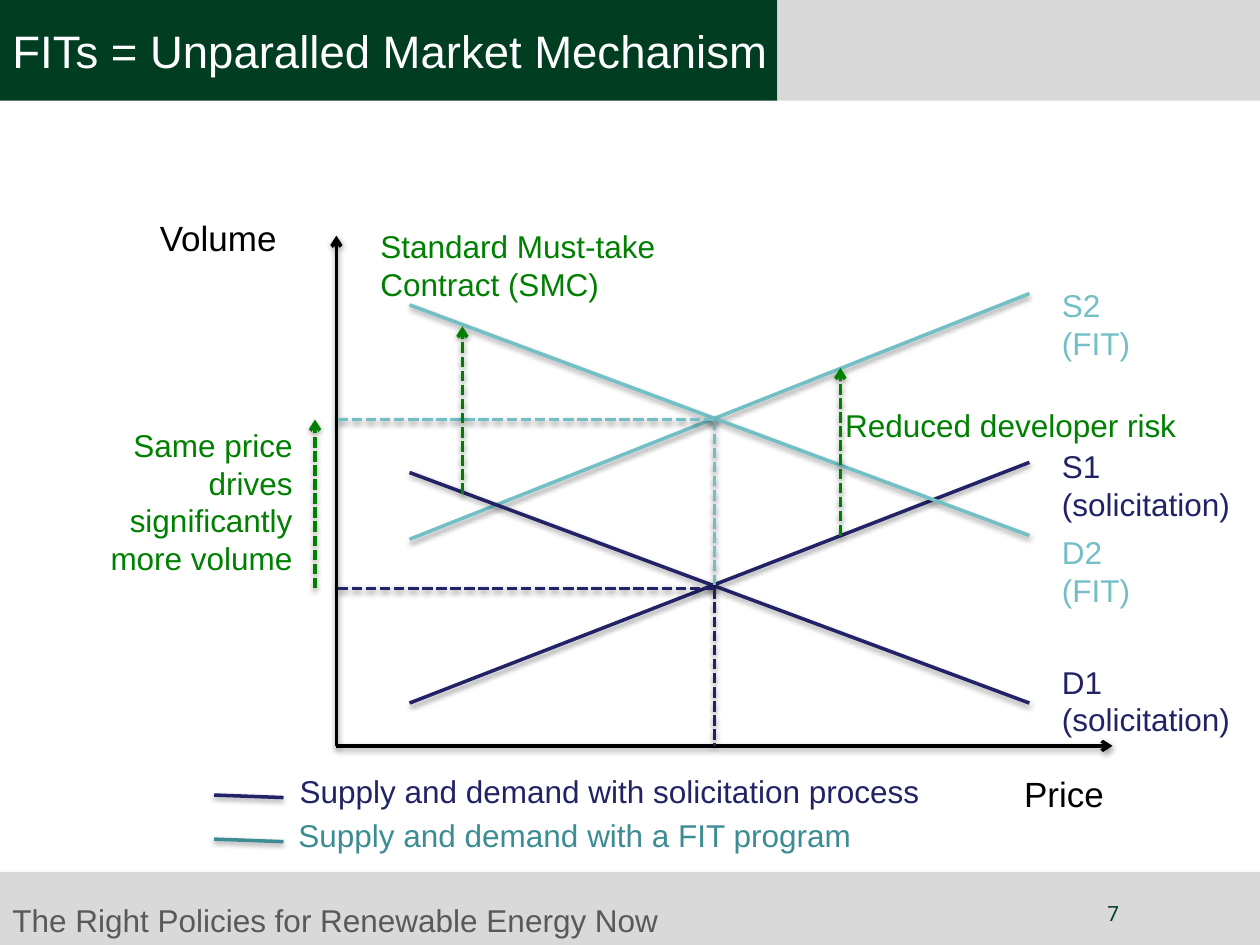
from lxml import etree
from pptx import Presentation
from pptx.dml.color import RGBColor
from pptx.enum.dml import MSO_LINE
from pptx.enum.shapes import MSO_CONNECTOR, MSO_SHAPE
from pptx.enum.text import PP_ALIGN
from pptx.oxml import parse_xml
from pptx.oxml.ns import nsdecls, qn
from pptx.util import Inches, Pt

RECT = MSO_SHAPE.RECTANGLE
STRAIGHT = MSO_CONNECTOR.STRAIGHT
DASH = MSO_LINE.SQUARE_DOT
LEFT, MID, RIGHT = PP_ALIGN.LEFT, PP_ALIGN.CENTER, PP_ALIGN.RIGHT

COLORS = {
    "black": "000000", "white": "FFFFFF", "gray": "D9D9D9",
    "slate": "595959", "forest": "013D21", "green": "008000",
    "navy": "222267", "aqua": "72BFC5", "teal": "3C8C93",
}
SHADOW = (
    f'<a:effectLst {nsdecls("a")}>'
    '<a:outerShdw blurRad="40000" dist="20000" dir="5400000" rotWithShape="0">'
    '<a:srgbClr val="000000"><a:alpha val="38000"/></a:srgbClr>'
    '</a:outerShdw></a:effectLst>'
)

# Axes and crossing points of the graph
AXIS_X, AXIS_Y = 2.67, 5.92
CROSS_X, FIT_Y, BID_Y = 5.67, 3.33, 4.67
CURVE_L, CURVE_R = 3.25, 8.17
LABEL_X = 8.33


def color(name):
    return RGBColor.from_string(COLORS[name])


def add_band(slide, x, y, w, h, fill):
    band = slide.shapes.add_shape(RECT, Inches(x), Inches(y), Inches(w), Inches(h))
    band.shadow.inherit = False
    band.fill.solid()
    band.fill.fore_color.rgb = color(fill)
    band.line.fill.background()


def add_text(slide, text, x, y, w, h, hue, size=18, align=LEFT, font="Arial"):
    box = slide.shapes.add_textbox(Inches(x), Inches(y), Inches(w), Inches(h))
    frame = box.text_frame
    frame.word_wrap = True
    para = frame.paragraphs[0]
    para.text = text
    para.alignment = align
    para.font.name = font
    para.font.size = Pt(size)
    para.font.color.rgb = color(hue)


def add_line(slide, x1, y1, x2, y2, hue, dash=False, arrow=False):
    """Draw a shadowed line; an arrow points at its end."""
    link = slide.shapes.add_connector(
        STRAIGHT, Inches(x1), Inches(y1), Inches(x2), Inches(y2))
    link.line.width = Pt(2)
    link.line.color.rgb = color(hue)
    if dash:
        link.line.dash_style = DASH
    if arrow:
        etree.SubElement(link.line._get_or_add_ln(), qn("a:tailEnd"), type="arrow")
    link._element.spPr.append(parse_xml(SHADOW))


def add_frame(slide):
    add_band(slide, 0, 6.92, 10, 0.58, "gray")
    add_band(slide, 0, 0, 6.17, 0.8, "forest")
    add_band(slide, 6.17, 0, 3.83, 0.8, "gray")
    add_text(slide, "The Right Policies for Renewable Energy Now",
             0, 7.1, 6.08, 0.4, "slate")
    add_text(slide, "7", 7.67, 7.1, 2.33, 0.4, "forest", 12, MID, "Roboto")
    add_text(slide, "FITs = Unparalled Market Mechanism",
             0, 0.13, 6.58, 0.54, "white", 26)


def add_graph(slide):
    # Axes
    add_line(slide, AXIS_X, AXIS_Y, AXIS_X, 1.87, "black", arrow=True)
    add_line(slide, AXIS_X, AXIS_Y, 8.83, AXIS_Y, "black", arrow=True)
    add_text(slide, "Price", 8.03, 6.08, 1.06, 0.44, "black", 20)
    add_text(slide, "Volume", 1.17, 1.67, 1.33, 0.44, "black", 20)

    # Supply and demand curves with their labels
    for label, start, end, top, width, hue in (
        ("S1 (solicitation)", 5.58, 3.67, 3.5, 1.67, "navy"),
        ("S2 (FIT)", 4.28, 2.33, 2.22, 0.75, "aqua"),
        ("D1 (solicitation)", 3.75, 5.58, 5.21, 1.67, "navy"),
        ("D2 (FIT)", 2.42, 4.25, 4.18, 0.75, "aqua"),
    ):
        add_line(slide, CURVE_L, start, CURVE_R, end, hue)
        add_text(slide, label, LABEL_X, top, width, 0.71, hue)

    # Guides from each crossing to the axes
    for y, foot, hue in ((BID_Y, AXIS_Y, "navy"), (FIT_Y, BID_Y, "aqua")):
        add_line(slide, CROSS_X, y, CROSS_X, foot, hue, dash=True)
        add_line(slide, CROSS_X, y, AXIS_X, y, hue, dash=True)


def add_shifts(slide):
    # Upward shifts and what drives them
    for x, foot, tip in ((6.67, 4.25, 2.92), (3.67, 3.92, 2.59), (2.5, BID_Y, FIT_Y)):
        add_line(slide, x, foot, x, tip, "green", dash=True, arrow=True)
    add_text(slide, "Reduced developer risk", 6.61, 3.17, 2.89, 0.4, "green")
    add_text(slide, "Standard Must-take Contract (SMC)",
             2.92, 1.75, 2.42, 0.71, "green")
    add_text(slide, "Same price drives significantly more volume",
             0.5, 3.33, 1.92, 1.31, "green", align=RIGHT)


def add_legend(slide):
    for text, x, y, w, hue in (
        ("Supply and demand with solicitation process", 2.28, 6.08, 5.72, "navy"),
        ("Supply and demand with a FIT program", 2.27, 6.43, 4.65, "teal"),
    ):
        add_line(slide, 1.7, y + 0.23, 2.25, y + 0.25, hue)
        add_text(slide, text, x, y, w, 0.4, hue)


def main():
    deck = Presentation()
    deck.slide_width, deck.slide_height = Inches(10), Inches(7.5)
    slide = deck.slides.add_slide(deck.slide_layouts[6])
    add_frame(slide)
    add_graph(slide)
    add_shifts(slide)
    add_legend(slide)
    deck.save("out.pptx")


if __name__ == "__main__":
    main()
